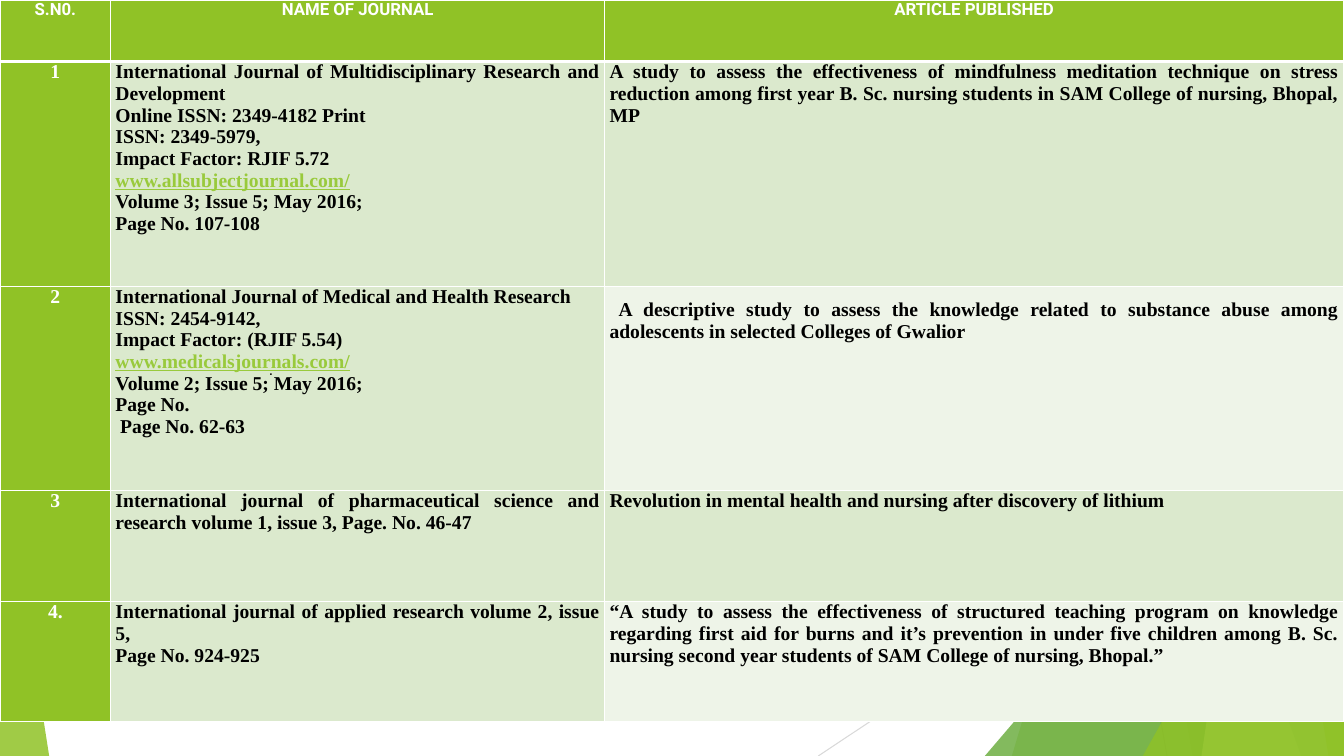
from lxml import etree
from pptx import Presentation
from pptx.dml.color import RGBColor
from pptx.enum.shapes import MSO_CONNECTOR, MSO_SHAPE
from pptx.enum.text import PP_ALIGN
from pptx.oxml import parse_xml
from pptx.oxml.ns import nsdecls, qn
from pptx.util import Cm, Pt

STRAIGHT = MSO_CONNECTOR.STRAIGHT
TRIANGLE = MSO_SHAPE.ISOSCELES_TRIANGLE
CENTER, JUSTIFY = PP_ALIGN.CENTER, PP_ALIGN.JUSTIFY

SLIDE_W, SLIDE_H = 33.87, 19.05
GREEN, PALE, PALER = "90C226", "DBE9CD", "EEF4E8"
WHITE, BLACK, LINK = "FFFFFF", "000000", "99CA3C"

HEADER_FONT = {"name": "Roboto", "size": Pt(12), "bold": True}
BODY_FONT = {"name": "Times New Roman", "size": Pt(14), "bold": True}
LINK_FONT = {**BODY_FONT, "underline": True}
DOT_FONT = {"name": "Arial", "size": Pt(11)}

COLUMN_WIDTHS = [2.79, 12.45, 18.62]
ROW_HEIGHTS = [1.55, 5.66, 5.15, 2.79, 3.04]
HEADINGS = ["S.N0.", "NAME OF JOURNAL", "ARTICLE PUBLISHED"]
PUBLICATIONS = [
    ("1",
     ["International Journal of Multidisciplinary Research and Development",
      "Online ISSN: 2349-4182 Print", "ISSN: 2349-5979,",
      "Impact Factor: RJIF 5.72", "www.allsubjectjournal.com/",
      "Volume 3; Issue 5; May 2016;", "Page No. 107-108"],
     "A study to assess the effectiveness of mindfulness meditation technique "
     "on stress reduction among first year B. Sc. nursing students in SAM "
     "College of nursing, Bhopal, MP"),
    ("2",
     ["International Journal of Medical and Health Research",
      "ISSN: 2454-9142,", "Impact Factor: (RJIF 5.54)",
      "www.medicalsjournals.com/", "Volume 2; Issue 5; May 2016;",
      "Page No.", "Page No. 62-63"],
     "A descriptive study to assess the knowledge related to substance abuse "
     "among adolescents in selected Colleges of Gwalior"),
    ("3",
     ["International journal of pharmaceutical science and research volume 1, "
      "issue 3, Page. No. 46-47"],
     "Revolution in mental health and nursing after discovery of lithium"),
    ("4.",
     ["International journal of applied research volume 2, issue 5,",
      "Page No. 924-925"],
     "“A study to assess the effectiveness of structured teaching program on "
     "knowledge regarding first aid for burns and it’s prevention in under "
     "five children among B. Sc. nursing second year students of SAM College "
     "of nursing, Bhopal.”"),
]


def rgb(color):
    return RGBColor.from_string(color)


def paint(shape, color, opacity):
    shape.shadow.inherit = False
    shape.fill.solid()
    shape.fill.fore_color.rgb = rgb(color)
    shape.line.fill.background()
    srgb = shape.fill._xPr.find(".//" + qn("a:srgbClr"))
    etree.SubElement(srgb, qn("a:alpha"), val=str(opacity * 1000))


def write(paragraph, text, font, color, align):
    paragraph.alignment = align
    run = paragraph.add_run()
    run.text = text
    for attribute, value in font.items():
        setattr(run.font, attribute, value)
    run.font.color.rgb = rgb(color)


def first_line_indent(paragraph, length):
    properties = paragraph._p.get_or_add_pPr()
    properties.set("marL", "0")
    properties.set("indent", str(Cm(length)))


def add_facets(slide, left, top, width, height):
    shapes = slide.shapes
    right, bottom = left + width, top + height

    def line(x1, y1, x2, y2, color):
        connector = shapes.add_connector(
            STRAIGHT, *map(Cm, (left + x1, top + y1, left + x2, top + y2)))
        connector.line.color.rgb = rgb(color)
        connector.line.width = Pt(0.75)
        etree.SubElement(connector._element.spPr, qn("a:effectLst"))

    def band(top_x, bottom_x, color, opacity):
        builder = shapes.build_freeform(Cm(left + top_x), Cm(top))
        builder.add_line_segments([
            (Cm(right), Cm(top)), (Cm(right), Cm(bottom)),
            (Cm(left + bottom_x), Cm(bottom))])
        paint(builder.convert_to_shape(), color, opacity)

    def triangle(x, y, w, apex, color, opacity):
        facet = shapes.add_shape(
            TRIANGLE, *map(Cm, (left + x, top + y, w, height - y)))
        facet.adjustments[0] = apex
        paint(facet, color, opacity)

    line(26.04, 0, 29.41, height, "BFBFBF")
    line(width, 10.24, 20.62, height, "D9D9D9")
    band(31.19, 25.5, GREEN, 30)
    band(26.67, 30.05, GREEN, 20)
    triangle(24.82, 8.46, 9.05, 1, "54A021", 72)
    band(25.93, 32.79, "3F7819", 70)
    band(33.1, 30.28, "C0E474", 70)
    band(30.38, 33.48, GREEN, 65)
    triangle(28.8, 9.98, 5.07, 1, GREEN, 80)
    triangle(0, 11.15, 1.24, 0, GREEN, 85)


def format_cell(cell, color, top_line, bottom_line):
    margins = {"margin_left": Cm(0.12), "margin_right": Cm(0.12),
               "margin_top": 0, "margin_bottom": 0}
    for attribute, value in margins.items():
        setattr(cell, attribute, value)
    borders = {"lnL": 1, "lnR": 1, "lnT": top_line, "lnB": bottom_line}
    for side, points in borders.items():
        cell._tc.get_or_add_tcPr().append(parse_xml(
            f'<a:{side} {nsdecls("a")} w="{Pt(points)}"><a:solidFill>'
            f'<a:srgbClr val="{WHITE}"/></a:solidFill></a:{side}>'))
    cell.fill.solid()
    cell.fill.fore_color.rgb = rgb(color)


def add_publications(slide, left, top):
    table = slide.shapes.add_table(
        len(ROW_HEIGHTS), len(COLUMN_WIDTHS), Cm(left), Cm(top),
        Cm(sum(COLUMN_WIDTHS)), Cm(sum(ROW_HEIGHTS))).table
    table.first_row = table.horz_banding = False
    for column, width in zip(table.columns, COLUMN_WIDTHS):
        column.width = Cm(width)
    for row, height in zip(table.rows, ROW_HEIGHTS):
        row.height = Cm(height)

    # Header row
    for column, heading in enumerate(HEADINGS):
        cell = table.cell(0, column)
        format_cell(cell, GREEN, 1, 3)
        write(cell.text_frame.paragraphs[0], heading, HEADER_FONT, WHITE, CENTER)

    # One row per publication
    for row, (number, journal, article) in enumerate(PUBLICATIONS, 1):
        number_cell, journal_cell, article_cell = table.rows[row].cells
        fills = (GREEN, PALE, PALE if row % 2 else PALER)
        for cell, fill in zip(table.rows[row].cells, fills):
            format_cell(cell, fill, 3 if row == 1 else 1, 1)
        write(number_cell.text_frame.paragraphs[0], number, BODY_FONT, WHITE, CENTER)
        write(article_cell.text_frame.paragraphs[0], article, BODY_FONT, BLACK, JUSTIFY)
        frame = journal_cell.text_frame
        for index, detail in enumerate(journal):
            paragraph = frame.add_paragraph() if index else frame.paragraphs[0]
            is_link = detail.startswith("www.")
            write(paragraph, detail, LINK_FONT if is_link else BODY_FONT,
                  LINK if is_link else BLACK, JUSTIFY)

    # Offsets in the second publication
    first_line_indent(table.cell(2, 1).text_frame.paragraphs[-1], 0.12)
    substance_abuse = table.cell(2, 2)
    substance_abuse.margin_top = Cm(0.33)
    first_line_indent(substance_abuse.text_frame.paragraphs[0], 0.23)


def add_dot(slide, left, top, width, height):
    dot = slide.shapes.add_textbox(*map(Cm, (left, top, width, height)))
    dot.text_frame.word_wrap = True
    write(dot.text_frame.paragraphs[0], ".", DOT_FONT, BLACK, None)


def main():
    deck = Presentation()
    deck.slide_width, deck.slide_height = Cm(SLIDE_W), Cm(SLIDE_H)
    slide = deck.slides.add_slide(deck.slide_layouts[6])
    add_facets(slide, 0, 0, SLIDE_W, SLIDE_H)
    add_publications(slide, 0, 0)
    add_dot(slide, 6.53, 8.94, 23.72, 1.5)
    deck.save("out.pptx")


if __name__ == "__main__":
    main()
